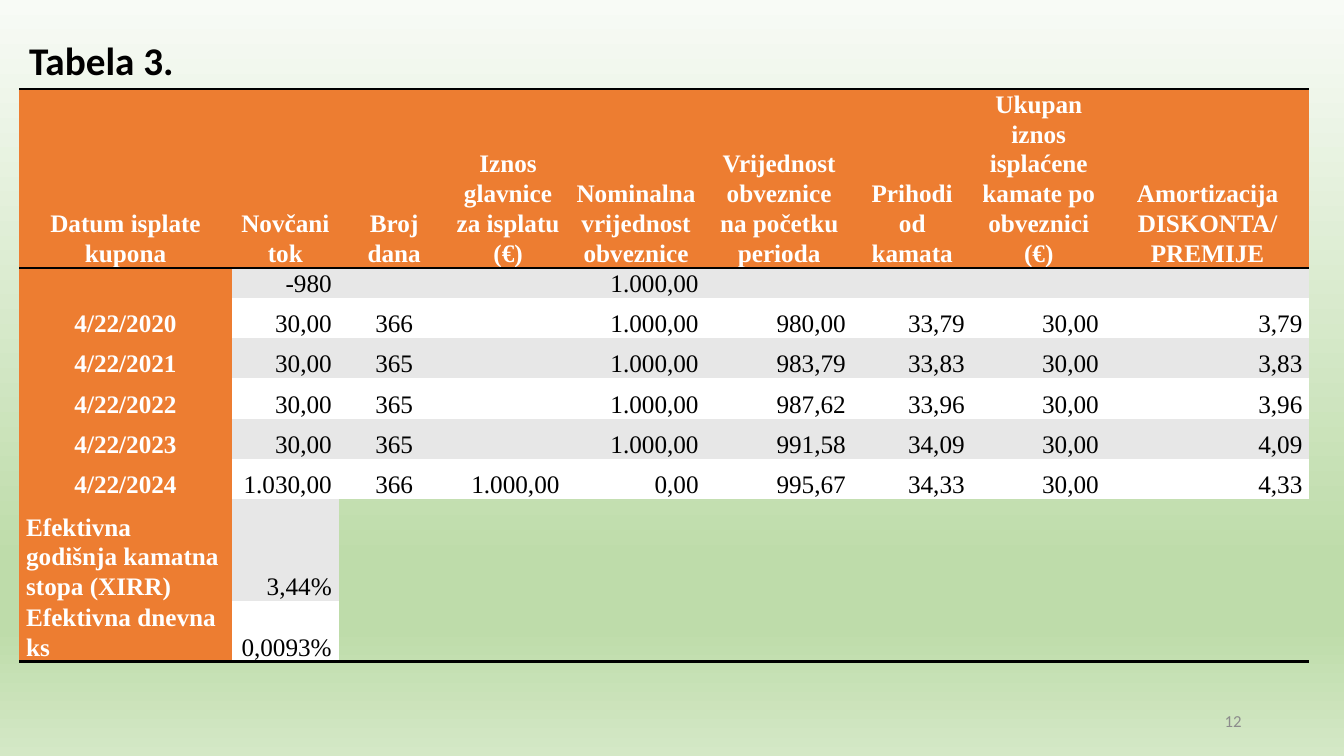
"""Build the bond amortisation table slide."""
import copy
import pptx
import pptx.util
import pptx.dml.color
import pptx.enum.text
import pptx.oxml
import pptx.oxml.ns

Pt = pptx.util.Pt
RGB = pptx.dml.color.RGBColor.from_string
ALIGN = pptx.enum.text.PP_ALIGN
ANCHOR = pptx.enum.text.MSO_ANCHOR
qn = pptx.oxml.ns.qn


class Theme:
    head = "ED7D31"
    band = "E7E7E7"
    white = "FFFFFF"
    black = "000000"
    grey = "8C8C8C"
    back = [(0, "F8FBF6"), (0.74, "BEDCAA"), (0.83, "BEDCAA"), (1, "D4E8C6")]
    serif = "Times New Roman"
    sans = "Calibri"
    title = 28
    body = 18
    small = 12


def write(frame, text, font=Theme.sans, size=Theme.body, color=Theme.black,
          bold=False, align=ALIGN.LEFT, lead=None):
    frame.word_wrap = True
    para = frame.paragraphs[0]
    para.alignment = align
    para.line_spacing = lead
    run = para.add_run()
    run.text = text
    run.font.name = font
    run.font.size = Pt(size)
    run.font.bold = bold
    run.font.color.rgb = RGB(color)


def rule(cell, side):
    line = pptx.oxml.parse_xml(
        f'<a:{side} {pptx.oxml.ns.nsdecls("a")} w="{Pt(2)}"><a:solidFill>'
        f'<a:srgbClr val="{Theme.black}"/></a:solidFill></a:{side}>')
    cell.fill.background()
    props = cell.fill._xPr
    props.insert(len(props) - 1, line)


deck = pptx.Presentation()
deck.slide_width, deck.slide_height = Pt(960), Pt(540)
slide = deck.slides.add_slide(deck.slide_layouts[6])

fill = slide.background.fill
fill.gradient()
fill.gradient_angle = 270
stops = next(slide.element.iter(qn("a:gsLst")))
for extra in range(len(Theme.back) - len(stops)):
    stops.append(copy.deepcopy(stops[0]))
for stop, (place, color) in zip(fill.gradient_stops, Theme.back):
    stop.position = place
    stop.color.rgb = RGB(color)

rows = [
    ["Datum isplate kupona", "Novčani tok", "Broj dana",
     "Iznos glavnice za isplatu (€)", "Nominalna vrijednost obveznice",
     "Vrijednost obveznice na početku perioda", "Prihodi od kamata",
     "Ukupan iznos isplaćene kamate po obveznici (€)",
     "Amortizacija DISKONTA/ PREMIJE"],
    ["", "-980", "", "", "1.000,00", "", "", "", ""],
    ["4/22/2020", "30,00", "366", "", "1.000,00", "980,00", "33,79", "30,00", "3,79"],
    ["4/22/2021", "30,00", "365", "", "1.000,00", "983,79", "33,83", "30,00", "3,83"],
    ["4/22/2022", "30,00", "365", "", "1.000,00", "987,62", "33,96", "30,00", "3,96"],
    ["4/22/2023", "30,00", "365", "", "1.000,00", "991,58", "34,09", "30,00", "4,09"],
    ["4/22/2024", "1.030,00", "366", "1.000,00", "0,00", "995,67", "34,33", "30,00", "4,33"],
    ["Efektivna godišnja kamatna stopa (XIRR)", "3,44%"],
    ["Efektivna dnevna ks", "0,0093%"],
]
widths = [152, 76.3, 79.2, 83.5, 99.4, 105.1, 85, 95.8, 115.2, 30.2]
heights = [116.6, 16.6] + [28.8] * 5 + [72.7, 43.2]
last = len(rows) - 1

shape = slide.shapes.add_table(len(rows), len(widths), Pt(13.7), Pt(63.4),
                               Pt(sum(widths)), Pt(sum(heights)))
table = shape.table
table.first_row = table.horz_banding = False
style = next(shape.element.iter(qn("a:tableStyleId")))
style.text = "{2D5ABB26-0587-4C30-8999-92F81FD0307C}"
for col, width in zip(table.columns, widths):
    col.width = Pt(width)
for row, height in zip(table.rows, heights):
    row.height = Pt(height)

for i, texts in enumerate(rows):
    full = len(texts) > 2
    for j in range(len(widths)):
        cell = table.cell(i, j)
        cell.margin_left = cell.margin_right = Pt(5)
        cell.margin_top = cell.margin_bottom = 0
        cell.vertical_anchor = ANCHOR.BOTTOM
        if i == 0:
            rule(cell, "lnT")
        if i in (0, last):
            rule(cell, "lnB")
        head = i == 0 or j == 0
        if head:
            tone = Theme.head
        else:
            tone = Theme.band if i % 2 else Theme.white
        if full or j < len(texts):
            cell.fill.solid()
            cell.fill.fore_color.rgb = RGB(tone)
        else:
            cell.fill.background()
        if j == 0 and not full:
            align = ALIGN.LEFT
        else:
            align = ALIGN.CENTER if head or j == 2 else ALIGN.RIGHT
        write(cell.text_frame, texts[j] if j < len(texts) else "",
              font=Theme.serif, bold=head, align=align, lead=1.07,
              color=Theme.white if head else Theme.black)
    if full:
        table.cell(i, 8).merge(table.cell(i, 9))

number = slide.shapes.add_textbox(Pt(678), Pt(500.5), Pt(216), Pt(28.8)).text_frame
number.vertical_anchor = ANCHOR.MIDDLE
write(number, "12", size=Theme.small, color=Theme.grey, align=ALIGN.RIGHT)

title = slide.shapes.add_textbox(Pt(13.7), Pt(22.3), Pt(181.4), Pt(41)).text_frame
title.auto_size = pptx.enum.text.MSO_AUTO_SIZE.SHAPE_TO_FIT_TEXT
write(title, "Tabela 3.", size=Theme.title, bold=True)

deck.save("out.pptx")
